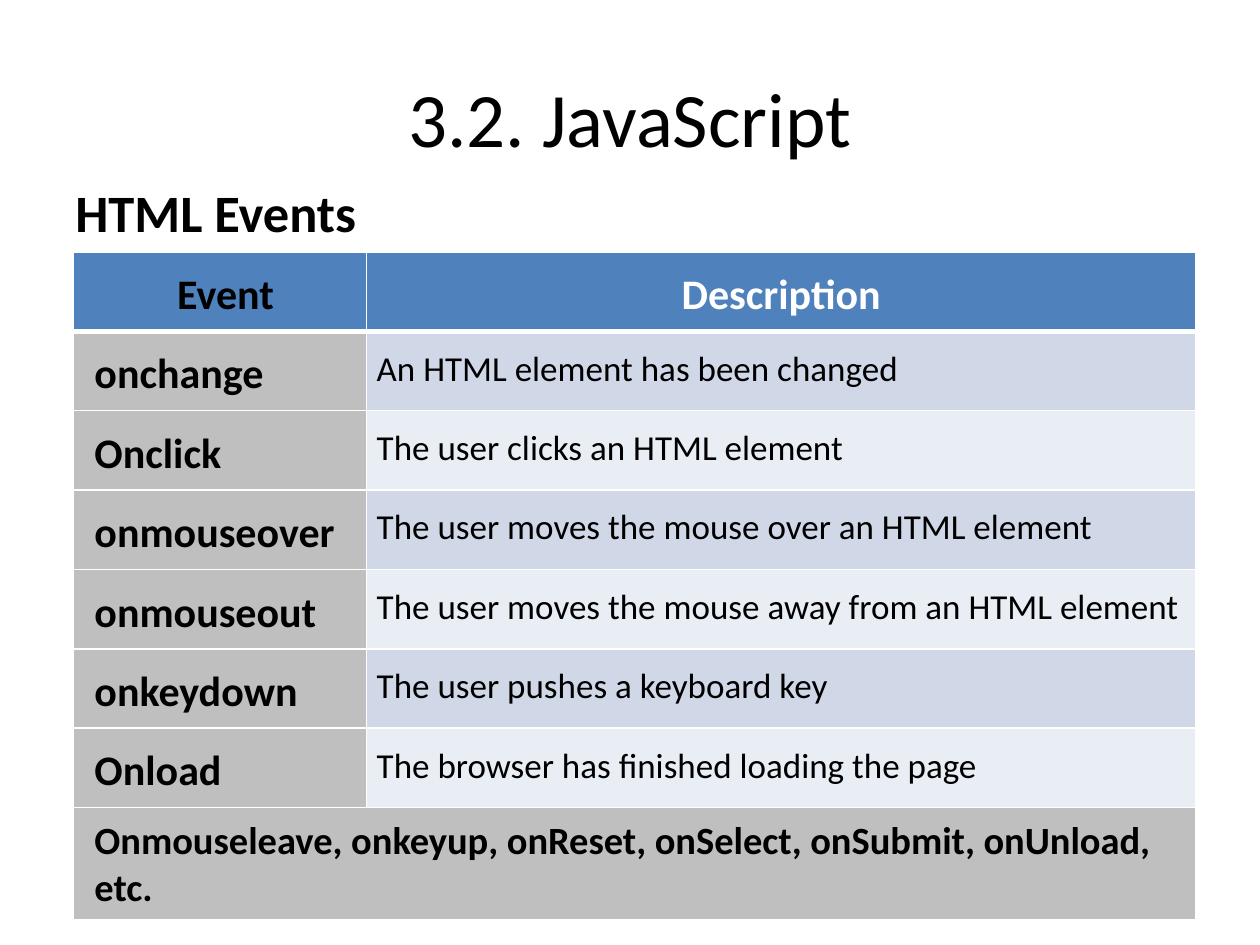
from lxml.etree import SubElement
from pptx import Presentation
from pptx.dml.color import RGBColor as RGB
from pptx.enum.text import MSO_ANCHOR as Anchor, PP_ALIGN as Align
from pptx.oxml.ns import qn
from pptx.util import Inches, Pt

TITLE = "3.2. JavaScript"
HEAD = "HTML Events"
COLS = ("Event", "Description")
EVENTS = [
    ("onchange", "An HTML element has been changed"),
    ("Onclick", "The user clicks an HTML element"),
    ("onmouseover", "The user moves the mouse over an HTML element"),
    ("onmouseout", "The user moves the mouse away from an HTML element"),
    ("onkeydown", "The user pushes a keyboard key"),
    ("Onload", "The browser has finished loading the page"),
]
MORE = "Onmouseleave, onkeyup, onReset, onSelect, onSubmit, onUnload, etc."

BLACK = RGB(0x00, 0x00, 0x00)
WHITE = RGB(0xFF, 0xFF, 0xFF)
BLUE = RGB(0x4F, 0x81, 0xBD)
GRAY = RGB(0xBF, 0xBF, 0xBF)
BANDS = (RGB(0xD0, 0xD8, 0xE8), RGB(0xE9, 0xED, 0xF4))

WIDTHS = (2.33, 6.58)
ROW = 0.63
PAD = 0.08
INDENT = 0.17


def write(frame, text, size, bold=False, color=BLACK, **para):
    frame.text = text
    line = frame.paragraphs[0]
    for name, value in para.items():
        setattr(line, name, value)
    font = line.runs[0].font
    style = {"name": "Calibri", "size": Pt(size), "bold": bold}
    for name, value in style.items():
        setattr(font, name, value)
    font.color.rgb = color


def place(shape, left, top, width, height):
    box = {"left": left, "top": top, "width": width, "height": height}
    for name, value in box.items():
        setattr(shape, name, Inches(value))


def dress(cell, fill, indent, **edges):
    pads = {"left": indent, "right": PAD, "top": PAD, "bottom": PAD}
    for side, value in pads.items():
        setattr(cell, f"margin_{side}", Inches(value))
    cell.vertical_anchor = Anchor.TOP
    props = cell._tc.get_or_add_tcPr()
    for side in "LRTB":
        edge = SubElement(props, qn(f"a:ln{side}"), w=str(Pt(edges.get(side, 1))))
        paint = SubElement(edge, qn("a:solidFill"))
        SubElement(paint, qn("a:srgbClr"), val=str(WHITE))
    cell.fill.solid()
    cell.fill.fore_color.rgb = fill


def fill_table(table):
    for col, width in zip(table.columns, WIDTHS):
        col.width = Inches(width)
    for row in table.rows:
        row.height = Inches(ROW)

    looks = zip(COLS, (BLACK, WHITE), (INDENT, PAD))
    for c, (text, color, indent) in enumerate(looks):
        cell = table.cell(0, c)
        dress(cell, BLUE, indent, B=3)
        write(cell.text_frame, text, 24, True, color,
              alignment=Align.CENTER, line_spacing=1.15)

    for r, (event, about) in enumerate(EVENTS, 1):
        top = 3 if r == 1 else 1
        band = BANDS[(r - 1) % 2]
        looks = ((event, 24, True, GRAY, INDENT), (about, 20, False, band, PAD))
        for c, (text, size, bold, fill, indent) in enumerate(looks):
            cell = table.cell(r, c)
            dress(cell, fill, indent, T=top)
            write(cell.text_frame, text, size, bold, line_spacing=1.15)

    last = len(EVENTS) + 1
    cell = table.cell(last, 0)
    cell.merge(table.cell(last, 1))
    dress(cell, GRAY, INDENT)
    write(cell.text_frame, MORE, 22, True)


def main():
    deck = Presentation()
    deck.slide_width, deck.slide_height = Inches(10), Inches(7.5)
    slide = deck.slides.add_slide(deck.slide_layouts[5])

    title = slide.shapes.title
    place(title, 0.5, 0.3, 9, 1.25)
    title.text_frame.vertical_anchor = Anchor.MIDDLE
    write(title.text_frame, TITLE, 44, alignment=Align.CENTER)

    head = slide.shapes.add_textbox(0, 0, 0, 0)
    place(head, 0.5, 1.38, 9, 4.95)
    head.text_frame.word_wrap = True
    write(head.text_frame, HEAD, 30, True, space_before=Pt(2))

    count = len(EVENTS) + 2
    grid = slide.shapes.add_table(count, 2, Inches(0.58), Inches(2),
                                  Inches(sum(WIDTHS)), Inches(ROW * count))
    fill_table(grid.table)
    deck.save("out.pptx")


if __name__ == "__main__":
    main()
